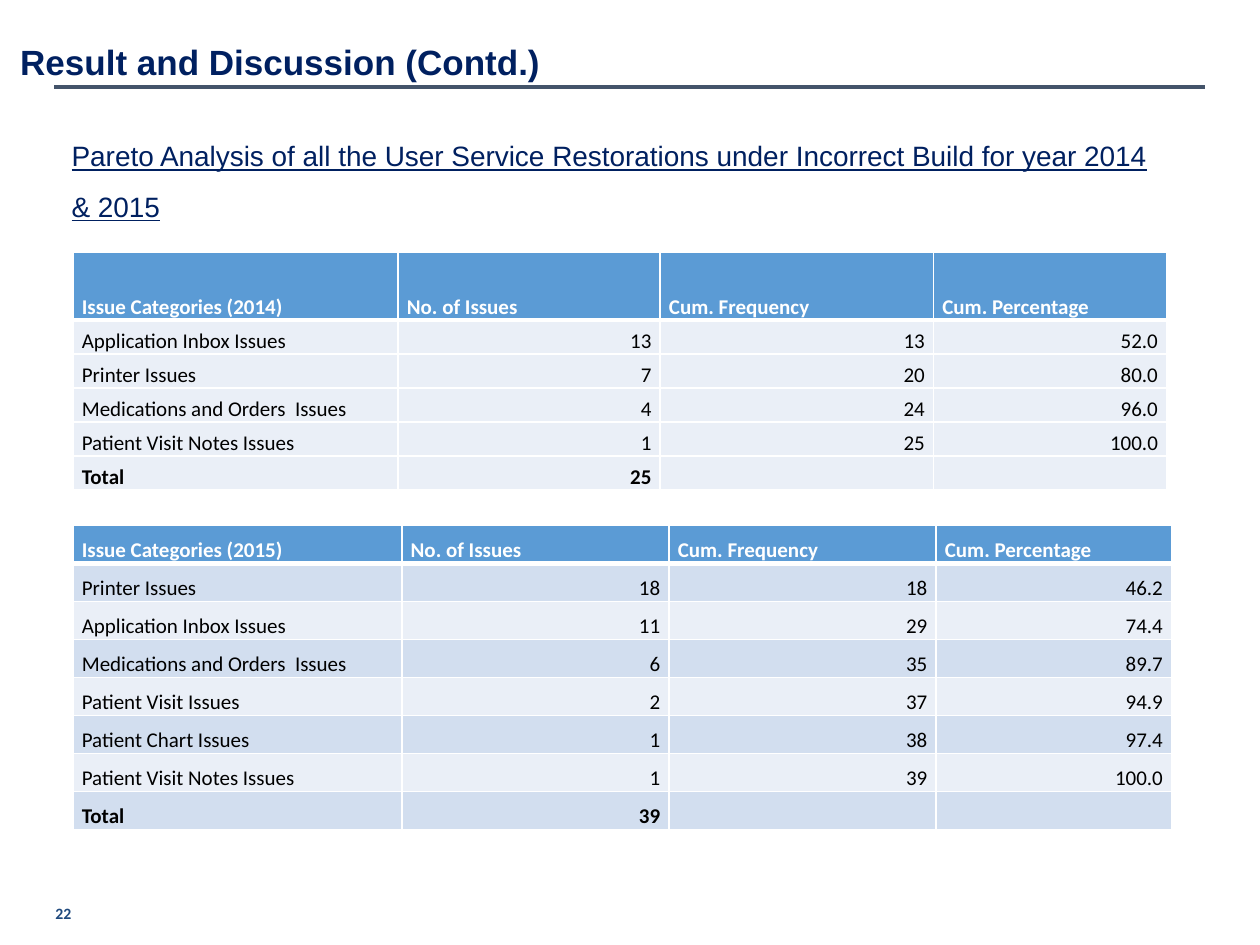
"""Build the slide of Pareto tables for 2014 and 2015."""
from lxml.etree import SubElement
from pptx import Presentation
from pptx.dml.color import RGBColor
from pptx.enum.shapes import MSO_CONNECTOR
from pptx.enum.text import MSO_ANCHOR, MSO_AUTO_SIZE, PP_ALIGN
from pptx.oxml.ns import qn
from pptx.util import Inches, Pt

NAVY, WHITE, BLACK = "002060", "FFFFFF", "000000"
HEADER, LIGHT, BAND = "5B9BD5", "EAEFF7", "D2DEEF"


def style(para, size, name, colour, bold=False, spacing=1.0):
    """Format a whole paragraph."""
    para.font.size, para.font.name, para.font.bold = Pt(size), name, bold
    para.font.color.rgb = RGBColor.from_string(colour)
    para.line_spacing = spacing


def area(left, top, width, height):
    """Turn percentages of the slide into lengths."""
    sides = (deck.slide_width, deck.slide_height) * 2
    return [int(side * share / 100) for side, share in zip(sides, (left, top, width, height))]


deck = Presentation()
deck.slide_width, deck.slide_height = Inches(10), Inches(7.5)
page = deck.slides.add_slide(deck.slide_layouts[5])

left, top, width, _ = area(4.3, 9.2, 91.3, 0)
rule = page.shapes.add_connector(MSO_CONNECTOR.STRAIGHT, left, top, left + width, top)
rule.line.color.rgb = RGBColor.from_string("44546A")
rule.line.width = Pt(2.25)
SubElement(rule._element.spPr, qn("a:effectLst"))

number = page.shapes.add_textbox(*area(4.4, 95.6, 3.3, 2.13)).text_frame
number.margin_left = number.margin_right = number.margin_top = number.margin_bottom = 0
number.word_wrap = True
number.text = "22"
style(number.paragraphs[0], 9, "Calibri", "1F497D", True, Pt(10.8))

title = page.shapes.title
title.left, title.top, title.width, title.height = area(0, 3.6, 92.4, 6.4)
frame = title.text_frame
frame.text = "Result and Discussion (Contd.)"
frame.auto_size = MSO_AUTO_SIZE.NONE
frame.vertical_anchor = MSO_ANCHOR.MIDDLE
frame.margin_left = Inches(0.16)
frame.paragraphs[0].alignment = PP_ALIGN.LEFT
style(frame.paragraphs[0], 20, "Arial", NAVY, True, 0.9)

subtitle = page.shapes.add_textbox(*area(4.7, 12.27, 88.3, 28.67)).text_frame
subtitle.word_wrap = True
subtitle.text = ("Pareto Analysis of all the User Service Restorations "
                 "under Incorrect Build for year 2014 & 2015")
style(subtitle.paragraphs[0], 16, "Arial", NAVY, spacing=1.5)
subtitle.paragraphs[0].font.underline = True

headings = ["No. of Issues", "Cum. Frequency", "Cum. Percentage"]
tables = [
    (area(5.8, 26.67, 86.8, 25.2), [2.58, 2.08, 2.17, 1.85], 2, [LIGHT], [
        ["Issue Categories (2014)", *headings],
        ["Application Inbox Issues", "13", "13", "52.0"],
        ["Printer Issues", "7", "20", "80.0"],
        ["Medications and Orders  Issues", "4", "24", "96.0"],
        ["Patient Visit Notes Issues", "1", "25", "100.0"],
        ["Total", "25", "", ""],
    ]),
    (area(5.8, 55.6, 87.2, 32.2), [2.61, 2.12, 2.12, 1.87], 1, [LIGHT, BAND], [
        ["Issue Categories (2015)", *headings],
        ["Printer Issues", "18", "18", "46.2"],
        ["Application Inbox Issues", "11", "29", "74.4"],
        ["Medications and Orders  Issues", "6", "35", "89.7"],
        ["Patient Visit Issues", "2", "37", "94.9"],
        ["Patient Chart Issues", "1", "38", "97.4"],
        ["Patient Visit Notes Issues", "1", "39", "100.0"],
        ["Total", "39", "", ""],
    ]),
]

for place, widths, header_units, fills, records in tables:
    table = page.shapes.add_table(len(records), len(widths), *place).table
    table.horz_banding = False
    for column, share in zip(table.columns, widths):
        column.width = int(place[2] * share / sum(widths))
    unit = place[3] / (len(records) - 1 + header_units)
    for row, record in enumerate(records):
        is_header, is_total = row == 0, row == len(records) - 1
        table.rows[row].height = int(unit * (header_units if is_header else 1))
        for column, words in enumerate(record):
            cell = table.cell(row, column)
            cell.text = words
            cell.vertical_anchor = MSO_ANCHOR.BOTTOM
            cell.margin_left = cell.margin_right = Inches(0.07)
            cell.margin_top = cell.margin_bottom = 0
            para = cell.text_frame.paragraphs[0]
            style(para, 12, "Calibri", WHITE if is_header else BLACK, is_header or is_total, 1.15)
            para.alignment = PP_ALIGN.RIGHT if column and not is_header else PP_ALIGN.LEFT
            for side in ("lnL", "lnR", "lnT", "lnB"):
                thick = (row, side) in ((0, "lnB"), (1, "lnT"))
                border = SubElement(cell._tc.get_or_add_tcPr(), qn(f"a:{side}"), w=str(Pt(3 if thick else 1)))
                SubElement(SubElement(border, qn("a:solidFill")), qn("a:srgbClr"), val=WHITE)
            cell.fill.solid()
            cell.fill.fore_color.rgb = RGBColor.from_string(HEADER if is_header else fills[row % len(fills)])

deck.save("out.pptx")
